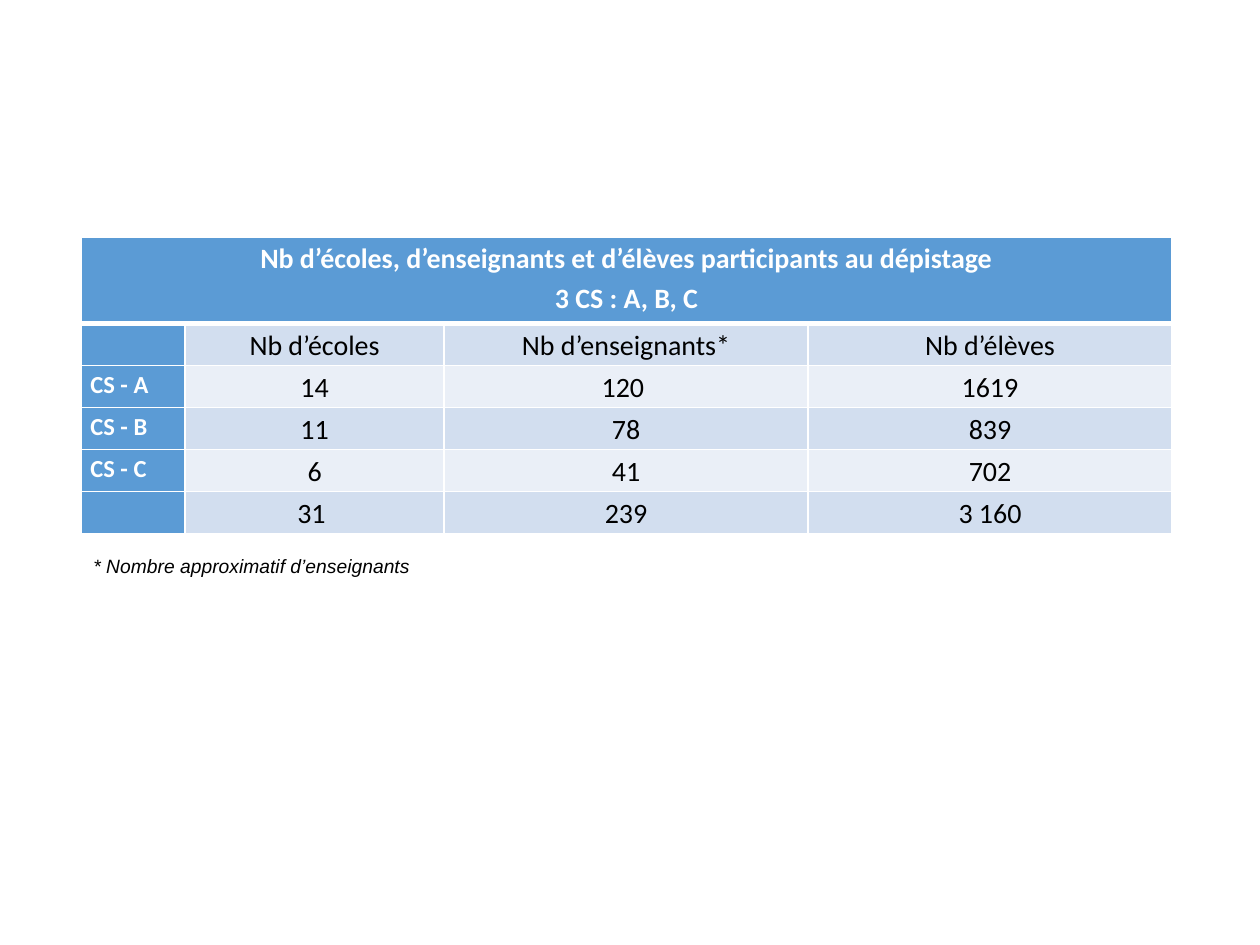
from dataclasses import dataclass

from lxml import etree
from pptx import Presentation
from pptx.dml.color import RGBColor
from pptx.enum.text import MSO_AUTO_SIZE, PP_ALIGN
from pptx.oxml.ns import qn
from pptx.util import Pt

CENTER = PP_ALIGN.CENTER
LEFT = PP_ALIGN.LEFT
FIT_SHAPE = MSO_AUTO_SIZE.SHAPE_TO_FIT_TEXT
BLANK_LAYOUT = 6


@dataclass(frozen=True)
class Theme:
    accent: str = "5B9BD5"
    dark_band: str = "D2DEEF"
    light_band: str = "EAEFF7"
    white: str = "FFFFFF"
    black: str = "000000"
    table_font: str = "Calibri"
    note_font: str = "Arial"
    table_size: int = 16
    label_size: int = 14
    note_size: int = 11


THEME = Theme()
TITLE_FORMAT = {"name": THEME.table_font, "size": Pt(THEME.table_size), "bold": True, "color": THEME.white}
LABEL_FORMAT = {**TITLE_FORMAT, "size": Pt(THEME.label_size)}
VALUE_FORMAT = {**TITLE_FORMAT, "bold": False, "color": THEME.black}
NOTE_FORMAT = {"name": THEME.note_font, "size": Pt(THEME.note_size), "italic": True, "color": THEME.black}

TITLE_LINES = [
    "Nb d’écoles, d’enseignants et d’élèves participants au dépistage",
    "3 CS : A, B, C",
]
ROWS = [
    ["", "Nb d’écoles", "Nb d’enseignants*", "Nb d’élèves"],
    ["CS - A", "14", "120 ", "1619"],
    ["CS - B", "11", "78", "839"],
    ["CS - C", "6", "41", "702"],
    ["", "31 ", "239", "3 160"],
]
COLUMN_WIDTHS = [59.5, 148, 208, 208]
TITLE_HEIGHT = 49.5
ROW_HEIGHT = 24
LEFT_EDGE = 46.25


def write_lines(frame, lines, text_format, align=LEFT, spacing=None):
    for index, line in enumerate(lines):
        para = frame.paragraphs[0] if index == 0 else frame.add_paragraph()
        para.alignment = align
        para.line_spacing = spacing
        if not line:
            continue
        span = para.add_run()
        span.text = line
        for key, value in text_format.items():
            if key == "color":
                span.font.color.rgb = RGBColor.from_string(value)
            else:
                setattr(span.font, key, value)


def set_borders(cell, bottom_width):
    properties = cell._tc.get_or_add_tcPr()
    sides = [("lnL", 1), ("lnR", 1), ("lnT", 1), ("lnB", bottom_width)]
    for position, (side, width) in enumerate(sides):
        line = etree.Element(qn(f"a:{side}"), w=str(Pt(width)))
        fill = etree.SubElement(line, qn("a:solidFill"))
        etree.SubElement(fill, qn("a:srgbClr"), val=THEME.white)
        properties.insert(position, line)


def fill_cell(cell, lines, color, text_format, align=CENTER, bottom_width=1):
    margins = {"margin_left": 5.4, "margin_right": 5.4, "margin_top": 0, "margin_bottom": 0}
    for key, value in margins.items():
        setattr(cell, key, Pt(value))
    cell.fill.solid()
    cell.fill.fore_color.rgb = RGBColor.from_string(color)
    set_borders(cell, bottom_width)
    write_lines(cell.text_frame, lines, text_format, align, 1.15)


def add_participation_table(page):
    height = TITLE_HEIGHT + ROW_HEIGHT * len(ROWS)
    table = page.shapes.add_table(
        len(ROWS) + 1, len(COLUMN_WIDTHS),
        Pt(LEFT_EDGE), Pt(135.5), Pt(sum(COLUMN_WIDTHS)), Pt(height),
    ).table
    for column, width in zip(table.columns, COLUMN_WIDTHS):
        column.width = Pt(width)
    for index, row in enumerate(table.rows):
        row.height = Pt(ROW_HEIGHT if index else TITLE_HEIGHT)

    last = len(COLUMN_WIDTHS) - 1
    table.cell(0, 0).merge(table.cell(0, last))
    for column in range(last + 1):
        lines = TITLE_LINES if column == 0 else []
        fill_cell(table.cell(0, column), lines, THEME.accent, TITLE_FORMAT, bottom_width=3)

    for index, (label, *values) in enumerate(ROWS, start=1):
        band = THEME.dark_band if index % 2 else THEME.light_band
        fill_cell(table.cell(index, 0), [label], THEME.accent, LABEL_FORMAT, LEFT)
        for column, value in enumerate(values, start=1):
            fill_cell(table.cell(index, column), [value], band, VALUE_FORMAT)


def add_note(page, text):
    box = page.shapes.add_textbox(Pt(LEFT_EDGE), Pt(313.2), Pt(196.5), Pt(20.6))
    frame = box.text_frame
    frame.word_wrap = False
    frame.auto_size = FIT_SHAPE
    write_lines(frame, [text], NOTE_FORMAT)


def main():
    deck = Presentation()
    deck.slide_width, deck.slide_height = Pt(720), Pt(540)
    page = deck.slides.add_slide(deck.slide_layouts[BLANK_LAYOUT])
    add_participation_table(page)
    add_note(page, "* Nombre approximatif d’enseignants")
    deck.save("out.pptx")


if __name__ == "__main__":
    main()
